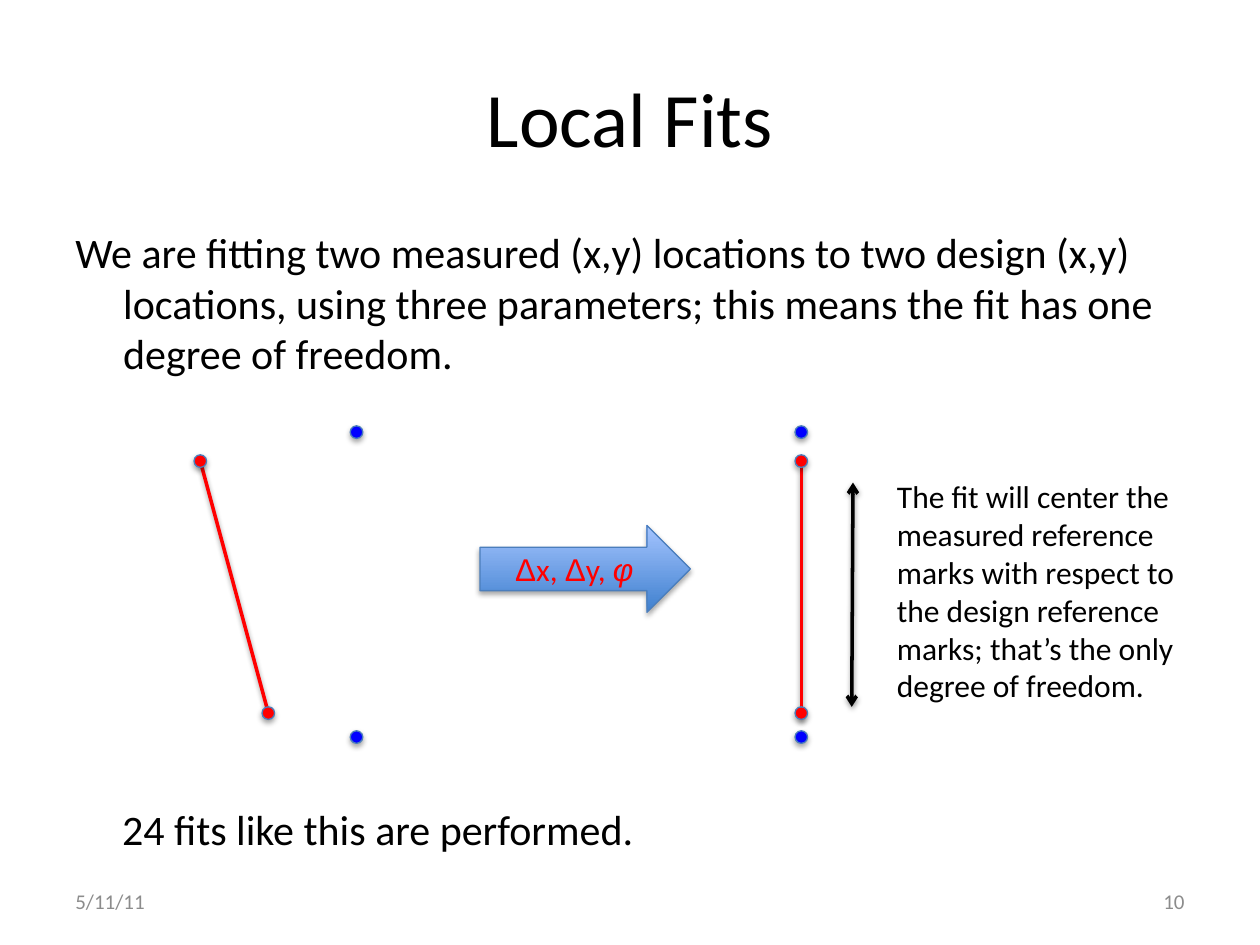
from lxml import etree
from pptx import Presentation, util as u
from pptx.dml.color import RGBColor
from pptx.enum import shapes, text
from pptx.oxml.ns import qn

INK = {"black": "000000", "grey": "8C8C8C", "red": "FF0000", "blue": "0000FF",
       "edge": "4B7EBC", "deep": "3F80CE", "pale": "A4C4FF"}
COLS, ROWS = 100, 75
SIDES = {"left": text.PP_ALIGN.LEFT, "mid": text.PP_ALIGN.CENTER,
         "right": text.PP_ALIGN.RIGHT}


def tint(name):
    return RGBColor.from_string(INK[name])


def write(frame, runs, size=18, ink="black", side="left", middle=False, hang=0, gap=0):
    frame.word_wrap = True
    frame.vertical_anchor = text.MSO_ANCHOR.MIDDLE if middle else text.MSO_ANCHOR.TOP
    para = frame.paragraphs[0]
    para.alignment = SIDES[side]
    para.space_before = u.Pt(gap)
    if hang:
        props = para._p.get_or_add_pPr()
        props.set("marL", str(u.Inches(hang)))
        props.set("indent", str(-u.Inches(hang)))
    for words, face, slant in runs:
        run = para.add_run()
        run.text = words
        font = run.font
        font.name, font.size, font.italic = face, u.Pt(size), slant
        font.color.rgb = tint(ink)


def plain(words):
    return [(words, "Calibri", False)]


class Board:
    def __init__(self, deck):
        self.deck = deck
        self.slide = deck.slides.add_slide(deck.slide_layouts[6])
        self.items = self.slide.shapes

    def x(self, col):
        return round(self.deck.slide_width * col / COLS)

    def y(self, row):
        return round(self.deck.slide_height * row / ROWS)

    def box(self, col, row, wide, high):
        return self.x(col), self.y(row), self.x(wide), self.y(high)

    def shade(self, item, alpha, dist):
        props = item._element.spPr
        for old in props.findall(qn("a:effectLst")):
            props.remove(old)
        glow = etree.SubElement(props, qn("a:effectLst"))
        cast = etree.SubElement(glow, qn("a:outerShdw"), blurRad=str(u.Pt(3.1)),
                                dist=str(u.Pt(dist)), dir="5400000", rotWithShape="0")
        ink = etree.SubElement(cast, qn("a:srgbClr"), val=INK["black"])
        etree.SubElement(ink, qn("a:alpha"), val=str(alpha * 1000))

    def label(self, area, words, **style):
        write(self.items.add_textbox(*self.box(*area)).text_frame, plain(words), **style)

    def shape(self, kind, *area):
        item = self.items.add_shape(kind, *self.box(*area))
        item.shadow.inherit = False
        item.line.color.rgb = tint("edge")
        item.line.width = u.Pt(0.75)
        self.shade(item, 35, 1.8)
        return item

    def dot(self, col, row, ink):
        item = self.shape(shapes.MSO_SHAPE.OVAL, col - 0.5, row - 0.5, 1, 1)
        item.fill.solid()
        item.fill.fore_color.rgb = tint(ink)

    def arrow(self, area, runs, **style):
        item = self.shape(shapes.MSO_SHAPE.RIGHT_ARROW, *area)
        item.fill.gradient()
        item.fill.gradient_angle = 90
        for stop, ink, place in zip(item.fill.gradient_stops, ("deep", "pale"), (0, 1)):
            stop.color.rgb = tint(ink)
            stop.position = place
        write(item.text_frame, runs, **style)

    def line(self, start, end, ink, heads=False):
        item = self.items.add_connector(shapes.MSO_CONNECTOR.STRAIGHT,
                                        self.x(start[0]), self.y(start[1]),
                                        self.x(end[0]), self.y(end[1]))
        item.line.color.rgb = tint(ink)
        item.line.width = u.Pt(2)
        if heads:
            stroke = item._element.spPr.find(qn("a:ln"))
            for tag in ("a:headEnd", "a:tailEnd"):
                etree.SubElement(stroke, qn(tag), type="arrow")
        self.shade(item, 38, 1.6)

    def pair(self, top, low, mark, drop=0):
        high, deep = 36.6, 56.6
        self.line((top, high + drop), (low, deep + drop), "red")
        for col, row in ((top, high), (low, deep)):
            self.dot(col, row, "red")
        for row in (34.3, 58.5):
            self.dot(mark, row, "blue")


def main():
    deck = Presentation()
    deck.slide_width, deck.slide_height = u.Inches(10), u.Inches(7.5)
    board = Board(deck)
    board.label((5, 3, 90, 12.5), "Local Fits", size=44, side="mid", middle=True)
    board.label((5, 17.5, 90, 15),
                "We are fitting two measured (x,y) locations to two design (x,y) locations, "
                "using three parameters; this means the fit has one degree of freedom.",
                size=24, hang=0.38, gap=4.8)
    foot = {"size": 12, "ink": "grey", "middle": True}
    board.label((5, 69.5, 23.3, 4), "5/11/11", **foot)
    board.label((71.7, 69.5, 23.3, 4), "10", side="right", **foot)

    board.pair(15.9, 21.3, 28.3)
    board.arrow((38.1, 41.7, 16.7, 6.9),
                [("Δ", "Arial", False), ("x, ", "Calibri", False), ("Δ", "Arial", False),
                 ("y, ", "Calibri", False), ("φ", "Arial", True)],
                ink="red", side="mid", middle=True)
    board.pair(63.6, 63.6, 63.6, drop=0.5)

    board.label((70.2, 37.4, 26.5, 19.2),
                "The fit will center the measured reference marks with respect to the design "
                "reference marks; that’s the only degree of freedom.")
    board.line((67.7, 38.3), (67.6, 56.1), "black", heads=True)
    board.label((8.7, 63.3, 85.1, 5), "24 fits like this are performed.", size=24)
    deck.save("out.pptx")


if __name__ == "__main__":
    main()
